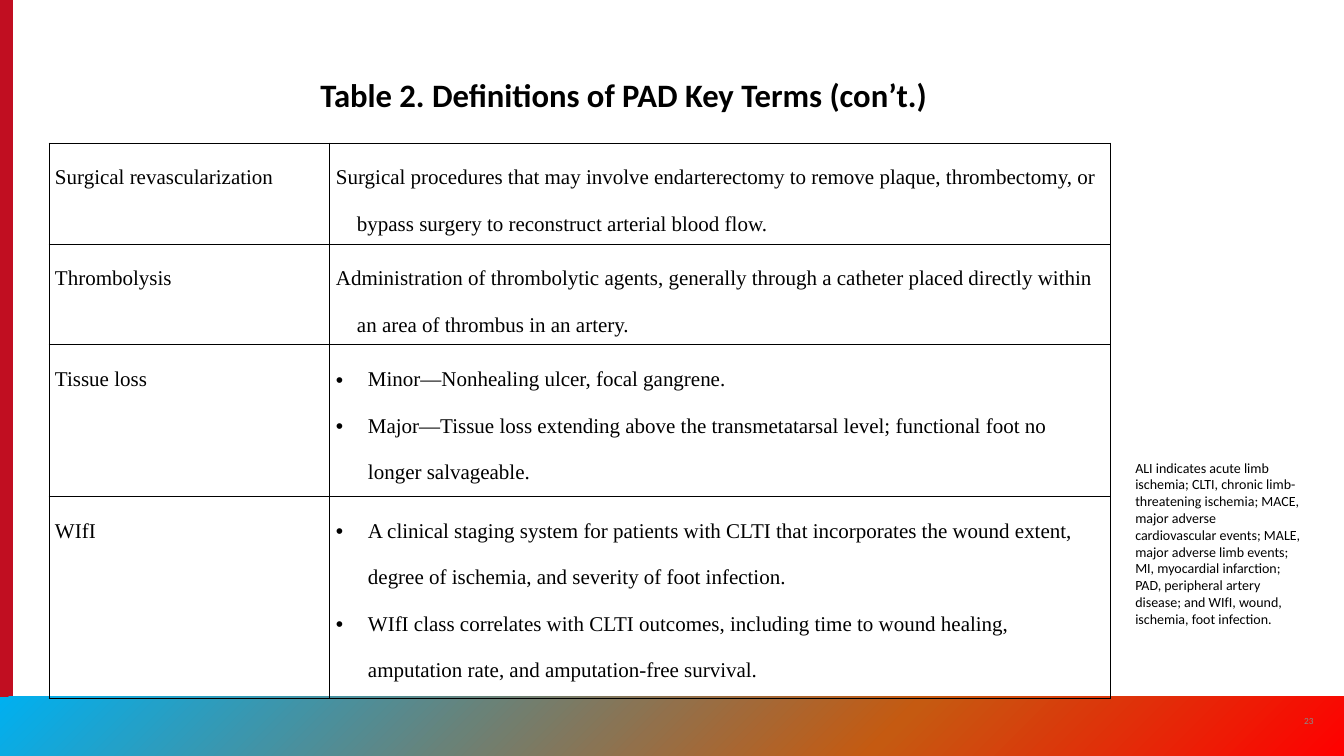
from copy import deepcopy
from dataclasses import dataclass

from lxml.etree import SubElement
from pptx import Presentation
from pptx.dml.color import RGBColor
from pptx.enum.shapes import MSO_SHAPE as Shape
from pptx.enum.text import MSO_ANCHOR as Anchor, MSO_AUTO_SIZE as AutoSize, PP_ALIGN as Align
from pptx.oxml.ns import qn
from pptx.util import Emu, Pt

TITLE_ONLY = 5
PX_PER_INCH = 84


@dataclass(frozen=True)
class Theme:
    sans: str = "Calibri"
    serif: str = "Times New Roman"
    ink: str = "000000"
    muted: str = "8A8B8A"
    accent: str = "C10E21"
    band: tuple = ((0, "00B0F0"), (0.66, "C55A11"), (1, "FF0000"))
    title_size: int = 28
    table_size: int = 18
    note_size: int = 12
    number_size: int = 8


def px(n):
    return Emu(round(n * 914400 / PX_PER_INCH))


def write(p, text, *, font, size, color, bold=False, align=None, spacing=None,
          hang=0, bullet=None):
    """Fill a paragraph with one run; hang is the hanging indent in px."""
    pPr = p._p.get_or_add_pPr()
    if spacing:
        p.line_spacing = spacing
    if align is not None:
        p.alignment = align
    if hang:
        pPr.set("marL", str(px(hang)))
        pPr.set("indent", str(-px(hang)))
    if bullet:
        SubElement(pPr, qn("a:buFont")).set("typeface", "Arial")
        SubElement(pPr, qn("a:buChar")).set("char", bullet)
    r = p.add_run()
    r.text = text
    r.font.name, r.font.size, r.font.bold = font, Pt(size), bold
    r.font.color.rgb = RGBColor.from_string(color)


def border(cell, color, width=1):
    tcPr = cell._tc.get_or_add_tcPr()
    for side in ("L", "R", "T", "B"):
        ln = SubElement(tcPr, qn(f"a:ln{side}"), w=str(Pt(width)))
        SubElement(SubElement(ln, qn("a:solidFill")), qn("a:srgbClr"), val=color)


class Deck:
    def __init__(self, theme, width, height):
        self.theme = theme
        self.prs = Presentation()
        self.prs.slide_width, self.prs.slide_height = px(width), px(height)
        self.slide = self.prs.slides.add_slide(self.prs.slide_layouts[TITLE_ONLY])

    def rect(self, x, y, w, h):
        sp = self.slide.shapes.add_shape(Shape.RECTANGLE, px(x), px(y), px(w), px(h))
        sp.shadow.inherit = False
        sp.line.fill.background()
        return sp

    def bar(self, *box):
        fill = self.rect(*box).fill
        fill.solid()
        fill.fore_color.rgb = RGBColor.from_string(self.theme.accent)

    def gradient_band(self, *box):
        fill = self.rect(*box).fill
        fill.gradient()
        fill.gradient_angle = 315
        stops = fill._fill._gradFill.gsLst
        stops.insert(1, deepcopy(stops[0]))
        for stop, (position, color) in zip(fill.gradient_stops, self.theme.band):
            stop.position = position
            stop.color.rgb = RGBColor.from_string(color)

    def title(self, text, x, y, w, h):
        sp = self.slide.shapes.title
        sp.left, sp.top, sp.width, sp.height = px(x), px(y), px(w), px(h)
        tf = sp.text_frame
        tf.word_wrap, tf.auto_size = True, AutoSize.NONE
        tf.vertical_anchor = Anchor.BOTTOM
        write(tf.paragraphs[0], text, font=self.theme.sans, size=self.theme.title_size,
              color=self.theme.ink, bold=True, align=Align.LEFT, spacing=0.9)

    def text(self, text, x, y, w, h, *, size, color, align=Align.LEFT, anchor=Anchor.TOP):
        tf = self.slide.shapes.add_textbox(px(x), px(y), px(w), px(h)).text_frame
        tf.word_wrap, tf.vertical_anchor = True, anchor
        write(tf.paragraphs[0], text, font=self.theme.sans, size=size, color=color, align=align)

    def cell(self, cell, content):
        """A string becomes a hanging paragraph, a list becomes bullets."""
        cell.margin_left = cell.margin_right = px(6)
        cell.margin_top = cell.margin_bottom = 0
        border(cell, self.theme.ink)
        cell.fill.background()
        bulleted = isinstance(content, list)
        tf = cell.text_frame
        for i, text in enumerate(content if bulleted else [content]):
            p = tf.add_paragraph() if i else tf.paragraphs[0]
            write(p, text, font=self.theme.serif, size=self.theme.table_size,
                  color=self.theme.ink, spacing=2.0, hang=32 if bulleted else 21,
                  bullet="•" if bulleted else None)

    def table(self, rows, x, y, widths, heights):
        table = self.slide.shapes.add_table(
            len(rows), len(widths), px(x), px(y), px(sum(widths)), px(sum(heights))).table
        table.first_row = table.horz_banding = False
        for column, width in zip(table.columns, widths):
            column.width = px(width)
        for row, height, contents in zip(table.rows, heights, rows):
            row.height = px(height)
            for cell, content in zip(row.cells, contents):
                self.cell(cell, content)


KEY_TERMS = [
    ("Surgical revascularization",
     "Surgical procedures that may involve endarterectomy to remove plaque, thrombectomy, "
     "or bypass surgery to reconstruct arterial blood flow."),
    ("Thrombolysis",
     "Administration of thrombolytic agents, generally through a catheter placed directly "
     "within an area of thrombus in an artery."),
    ("Tissue loss",
     ["Minor—Nonhealing ulcer, focal gangrene.",
      "Major—Tissue loss extending above the transmetatarsal level; functional foot no "
      "longer salvageable."]),
    ("WIfI",
     ["A clinical staging system for patients with CLTI that incorporates the wound extent, "
      "degree of ischemia, and severity of foot infection.",
      "WIfI class correlates with CLTI outcomes, including time to wound healing, "
      "amputation rate, and amputation-free survival."]),
]
ABBREVIATIONS = (
    "ALI indicates acute limb ischemia; CLTI, chronic limb-threatening ischemia; MACE, "
    "major adverse cardiovascular events; MALE, major adverse limb events; MI, myocardial "
    "infarction; PAD, peripheral artery disease; and WIfI, wound, ischemia, foot infection.")


def main():
    theme = Theme()
    deck = Deck(theme, 1344, 756)
    deck.bar(0, 0, 13, 756)
    deck.gradient_band(0, 697, 1344, 59)
    deck.text("23", 1289, 701, 40, 40, size=theme.number_size, color=theme.muted,
              align=Align.CENTER, anchor=Anchor.MIDDLE)
    deck.title("Table 2. Definitions of PAD Key Terms (con’t.)", 312, 70, 721, 49)
    deck.table(KEY_TERMS, 49, 143, widths=(281, 781), heights=(101, 101, 151, 202))
    deck.text(ABBREVIATIONS, 1127, 455, 182, 216, size=theme.note_size, color=theme.ink)
    deck.prs.save("out.pptx")


if __name__ == "__main__":
    main()
